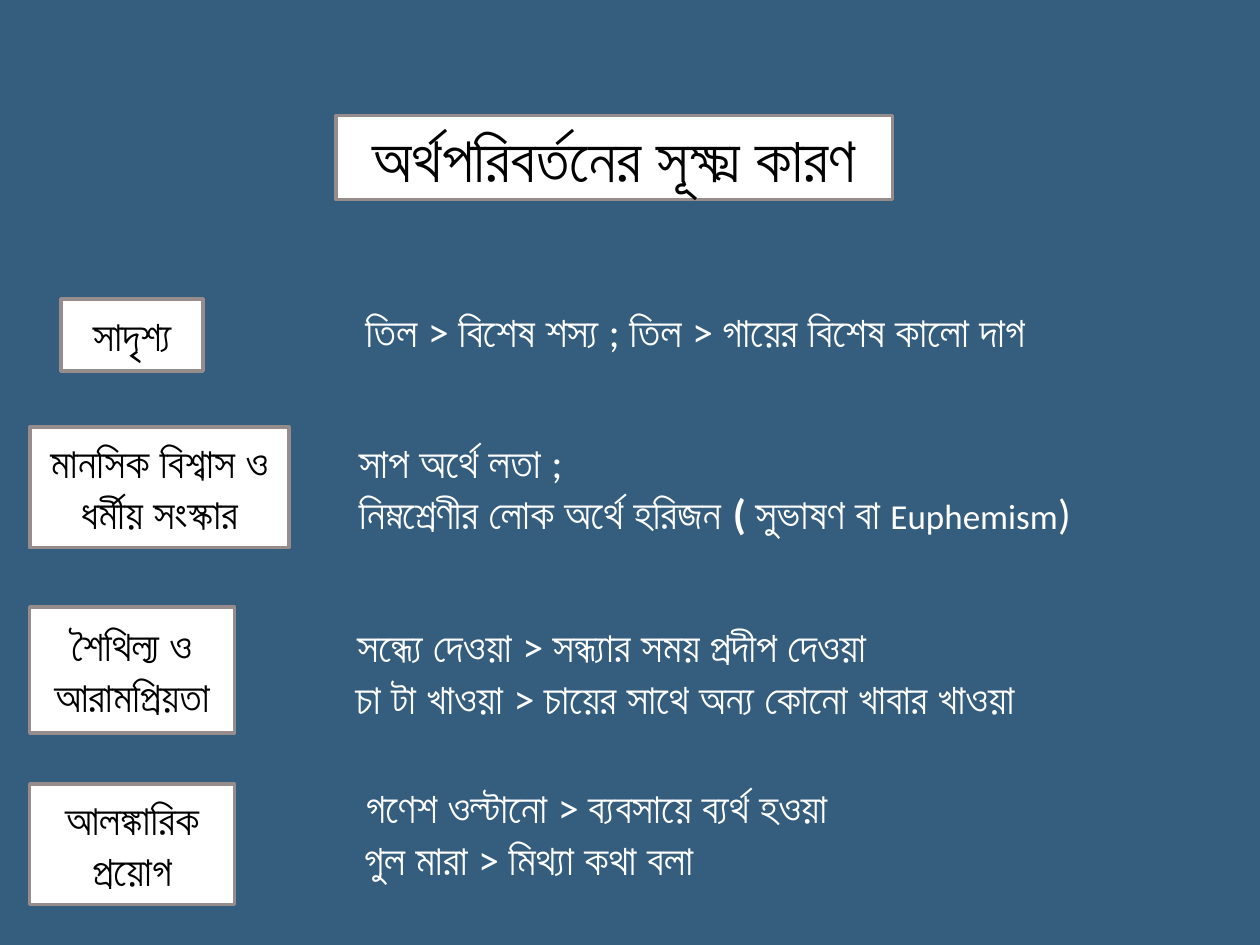
from dataclasses import dataclass

from pptx import Presentation
from pptx.dml.color import RGBColor
from pptx.enum import shapes, text
from pptx.util import Pt


@dataclass(frozen=True)
class Theme:
    font: str = "Calibri"
    background: RGBColor = RGBColor(0x35, 0x5D, 0x7E)
    box_fill: RGBColor = RGBColor(0xFF, 0xFF, 0xFF)
    box_line: RGBColor = RGBColor(0x96, 0x8C, 0x8C)
    box_text: RGBColor = RGBColor(0, 0, 0)
    example_text: RGBColor = RGBColor(0xFF, 0xFF, 0xFF)
    title_size: int = 36
    lead_size: int = 28
    body_size: int = 24
    small_size: int = 20
    line_width: int = 2


THEME = Theme()
PLAIN, BOLD = (THEME.body_size, False), (THEME.body_size, True)
LEAD, SMALL = (THEME.lead_size, False), (THEME.small_size, False)

TITLE = "অর্থপরিবর্তনের সূক্ষ্ম কারণ"
TITLE_BOX = (192, 66, 318, 48)

# Each cause: label lines, label box, example lines of (text, style) runs, example box
CAUSES = [
    (["সাদৃশ্য"], (35, 171, 81, 41),
     [[(" তিল", BOLD), (" > বিশেষ শস্য ; ", PLAIN), ("তিল", BOLD),
       (" > গায়ের বিশেষ কালো দাগ", PLAIN)]],
     (195, 171, 458, 36)),
    (["মানসিক বিশ্বাস ও", "ধর্মীয় সংস্কার"], (17, 244, 148, 69),
     [[(" সাপ অর্থে ", PLAIN), ("লতা", BOLD), (" ;", PLAIN)],
      [(" নিম্নশ্রেণীর লোক অর্থে ", PLAIN), ("হরিজন ( ", BOLD),
       ("সুভাষণ বা ", PLAIN), ("Euphemism", SMALL), (")", PLAIN)]],
     (192, 246, 554, 66)),
    (["শৈথিল্য ও", "আরামপ্রিয়তা"], (17, 347, 117, 72),
     [[(" ", LEAD), ("সন্ধ্যে দেওয়া > সন্ধ্যার সময় প্রদীপ দেওয়া", PLAIN)],
      [(" চা টা খাওয়া > চায়ের সাথে অন্য কোনো খাবার খাওয়া", PLAIN)]],
     (190, 347, 530, 99)),
    (["আলঙ্কারিক প্রয়োগ"], (17, 448, 117, 69),
     [[(" ", LEAD), ("গণেশ ওল্টানো > ব্যবসায়ে ব্যর্থ হওয়া", PLAIN)],
      [(" গুল মারা > মিথ্যা কথা বলা", PLAIN)]],
     (195, 439, 381, 99)),
]


def format_run(run, size, color, bold=False):
    run.font.name = THEME.font
    run.font.size = Pt(size)
    run.font.bold = bold
    run.font.color.rgb = color


def style_box(shape, lines, size):
    """White bordered box with centred text."""
    shape.fill.solid()
    shape.fill.fore_color.rgb = THEME.box_fill
    shape.line.color.rgb = THEME.box_line
    shape.line.width = Pt(THEME.line_width)
    frame = shape.text_frame
    frame.text = "\n".join(lines)
    frame.word_wrap = True
    frame.auto_size = text.MSO_AUTO_SIZE.NONE
    frame.vertical_anchor = text.MSO_ANCHOR.MIDDLE
    for paragraph in frame.paragraphs:
        paragraph.alignment = text.PP_ALIGN.CENTER
        for run in paragraph.runs:
            format_run(run, size, THEME.box_text)


def place_title(slide, box):
    title = slide.shapes.title
    title.left, title.top, title.width, title.height = map(Pt, box)
    style_box(title, [TITLE], THEME.title_size)


def place_label(slide, box, lines):
    label = slide.shapes.add_shape(
        shapes.MSO_SHAPE.FLOWCHART_PROCESS, *map(Pt, box))
    label.shadow.inherit = False
    style_box(label, lines, THEME.body_size)


def place_examples(slide, box, lines):
    frame = slide.shapes.add_textbox(*map(Pt, box)).text_frame
    frame.word_wrap = True
    for index, line in enumerate(lines):
        paragraph = frame.add_paragraph() if index else frame.paragraphs[0]
        for words, (size, bold) in line:
            run = paragraph.add_run()
            run.text = words
            format_run(run, size, THEME.example_text, bold)


def main():
    presentation = Presentation()
    presentation.slide_width, presentation.slide_height = Pt(720), Pt(540)
    title_only = presentation.slide_layouts[5]
    slide = presentation.slides.add_slide(title_only)
    slide.background.fill.solid()
    slide.background.fill.fore_color.rgb = THEME.background

    place_title(slide, TITLE_BOX)
    for label_lines, label_box, example_lines, example_box in CAUSES:
        place_label(slide, label_box, label_lines)
        place_examples(slide, example_box, example_lines)

    presentation.save("out.pptx")


if __name__ == "__main__":
    main()
